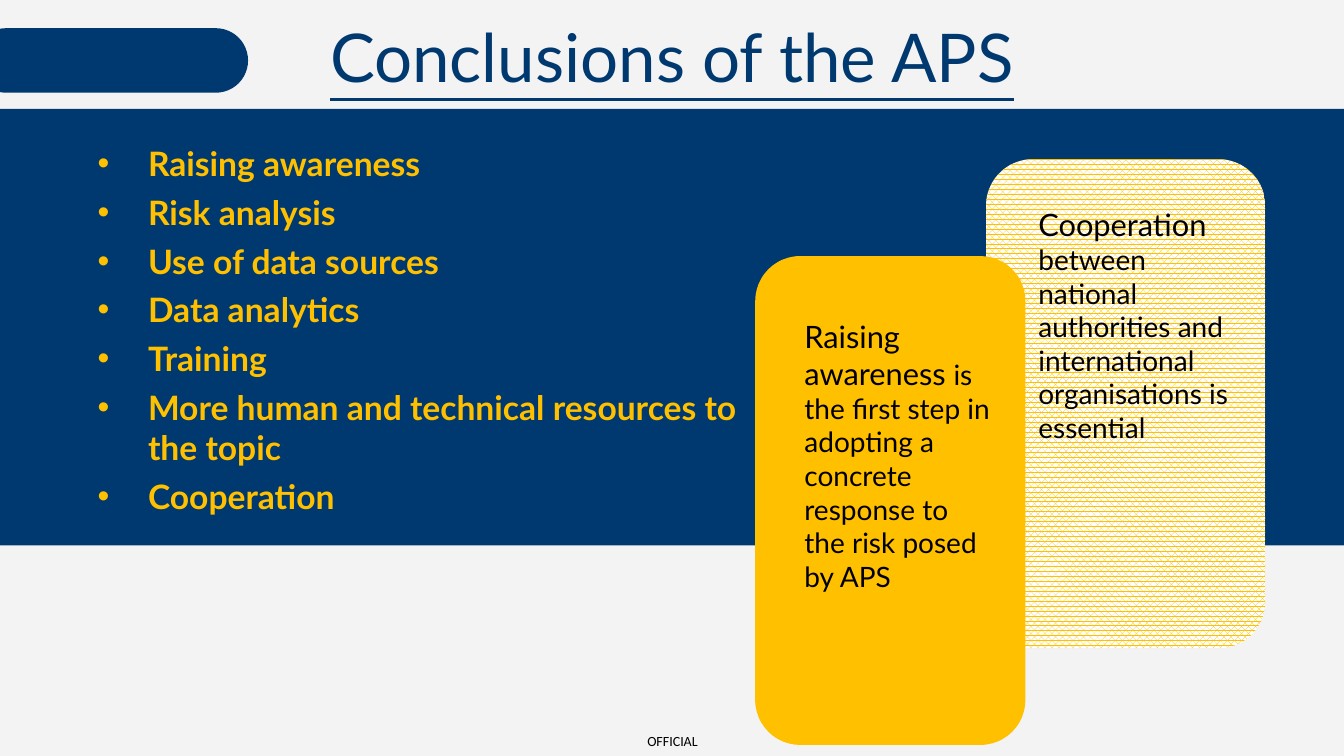
from dataclasses import dataclass

from pptx import Presentation
from pptx.dml.color import RGBColor
from pptx.enum import dml, shapes, text
from pptx.oxml import ns, xmlchemy
from pptx.util import Inches, Pt


@dataclass(frozen=True)
class Theme:
    paper: str = "F3F3F3"
    navy: str = "00396F"
    gold: str = "FFC000"
    white: str = "FFFFFF"
    black: str = "000000"
    font: str = "Lato"
    label_font: str = "Calibri"
    title: int = 48
    bullet: int = 24
    lead: int = 22
    body: int = 20
    gap: int = 18
    label: int = 10


THEME = Theme()
TITLE = "Conclusions of the APS"
LABEL = "OFFICIAL"
CONCLUSIONS = [
    "Raising awareness",
    "Risk analysis",
    "Use of data sources",
    "Data analytics",
    "Training",
    "More human and technical resources to the topic",
    "Cooperation",
]
CARDS = [
    {
        "frame": (9.78, 1.58, 2.77, 4.85),
        "patterned": True,
        "text_frame": (9.7, 1.99, 2.68, 2.49),
        "spans": [
            ("Cooperation", THEME.lead),
            (" ", THEME.gap),
            ("between national authorities and international organisations is essential", THEME.body),
        ],
    },
    {
        "frame": (7.49, 2.54, 2.68, 4.85),
        "patterned": False,
        "text_frame": (7.38, 3.1, 2.56, 2.86),
        "spans": [
            ("Raising awareness ", THEME.lead),
            ("is the first step in adopting a concrete response to the risk posed by APS", THEME.body),
        ],
    },
]
RECT = shapes.MSO_SHAPE.RECTANGLE
ROUNDED = shapes.MSO_SHAPE.ROUNDED_RECTANGLE
BANDS = [
    (RECT, (0, 1.08, 13.33, 2.56)),
    (RECT, (0, 3.56, 13.33, 1.85)),
    (ROUNDED, (-0.26, 0.28, 2.72, 0.64)),
]
INDENT = 0.5


def color(value):
    return RGBColor.from_string(value)


def apply(target, values):
    for name, value in values.items():
        setattr(target, name, value)


def add_block(page, kind, frame, fill):
    block = page.shapes.add_shape(kind, *map(Inches, frame))
    block.shadow.inherit = False
    block.line.fill.background()
    block.fill.solid()
    block.fill.fore_color.rgb = color(fill)
    return block


def add_box(page, frame):
    box = page.shapes.add_textbox(*map(Inches, frame))
    box.text_frame.word_wrap = True
    return box.text_frame


def add_span(para, words, size, ink, font=THEME.font, **style):
    span = para.add_run()
    span.text = words
    apply(span.font, {"name": font, "size": Pt(size), **style})
    span.font.color.rgb = color(ink)


def indent(para, hanging):
    para.space_after = Pt(6)
    properties = para._p.get_or_add_pPr()
    properties.set("marL", str(Inches(INDENT)))
    properties.set("indent", str(-Inches(INDENT) if hanging else 0))
    if hanging:
        properties.append(xmlchemy.OxmlElement("a:buFont"))
        properties.find(ns.qn("a:buFont")).set("typeface", "Arial")
        properties.append(xmlchemy.OxmlElement("a:buChar"))
        properties.find(ns.qn("a:buChar")).set("char", "•")


def add_title(page):
    title = page.shapes.title
    left, top, width, height = map(Inches, (1.5, 0.08, 10.33, 0.94))
    apply(title, {"left": left, "top": top, "width": width, "height": height})
    apply(title.text_frame, {
        "word_wrap": True,
        "auto_size": text.MSO_AUTO_SIZE.NONE,
        "vertical_anchor": text.MSO_ANCHOR.MIDDLE,
    })
    para = title.text_frame.paragraphs[0]
    apply(para, {"alignment": text.PP_ALIGN.CENTER, "line_spacing": 1.0})
    add_span(para, TITLE, THEME.title, THEME.navy, underline=True)


def add_label(page):
    frame = add_box(page, (6.27, 7.21, 0.8, 0.29))
    apply(frame, {
        "margin_left": 0, "margin_right": 0, "margin_top": 0, "margin_bottom": 0,
        "vertical_anchor": text.MSO_ANCHOR.MIDDLE,
    })
    para = frame.paragraphs[0]
    para.alignment = text.PP_ALIGN.CENTER
    add_span(para, LABEL, THEME.label, THEME.black, THEME.label_font)


def add_conclusions(page):
    frame = add_box(page, (0.87, 1.37, 6.76, 3.84))
    for index, words in enumerate(CONCLUSIONS):
        para = frame.add_paragraph() if index else frame.paragraphs[0]
        indent(para, hanging=True)
        add_span(para, words, THEME.bullet, THEME.gold, bold=True)


def add_cards(page):
    for card in CARDS:
        block = add_block(page, ROUNDED, card["frame"], THEME.gold)
        if card["patterned"]:
            block.fill.patterned()
            block.fill.pattern = dml.MSO_PATTERN.PERCENT_70
            block.fill.fore_color.rgb = color(THEME.gold)
            block.fill.back_color.rgb = color(THEME.white)
    for card in reversed(CARDS):
        para = add_box(page, card["text_frame"]).paragraphs[0]
        indent(para, hanging=False)
        for words, size in card["spans"]:
            add_span(para, words, size, THEME.black)


def main():
    deck = Presentation()
    apply(deck, {"slide_width": Inches(13.33), "slide_height": Inches(7.5)})
    page = deck.slides.add_slide(deck.slide_layouts[5])
    page.background.fill.solid()
    page.background.fill.fore_color.rgb = color(THEME.paper)
    add_label(page)
    for kind, frame in BANDS:
        band = add_block(page, kind, frame, THEME.navy)
        if kind == ROUNDED:
            band.adjustments[0] = 0.5
    add_conclusions(page)
    add_cards(page)
    add_title(page)
    deck.save("out.pptx")


if __name__ == "__main__":
    main()
